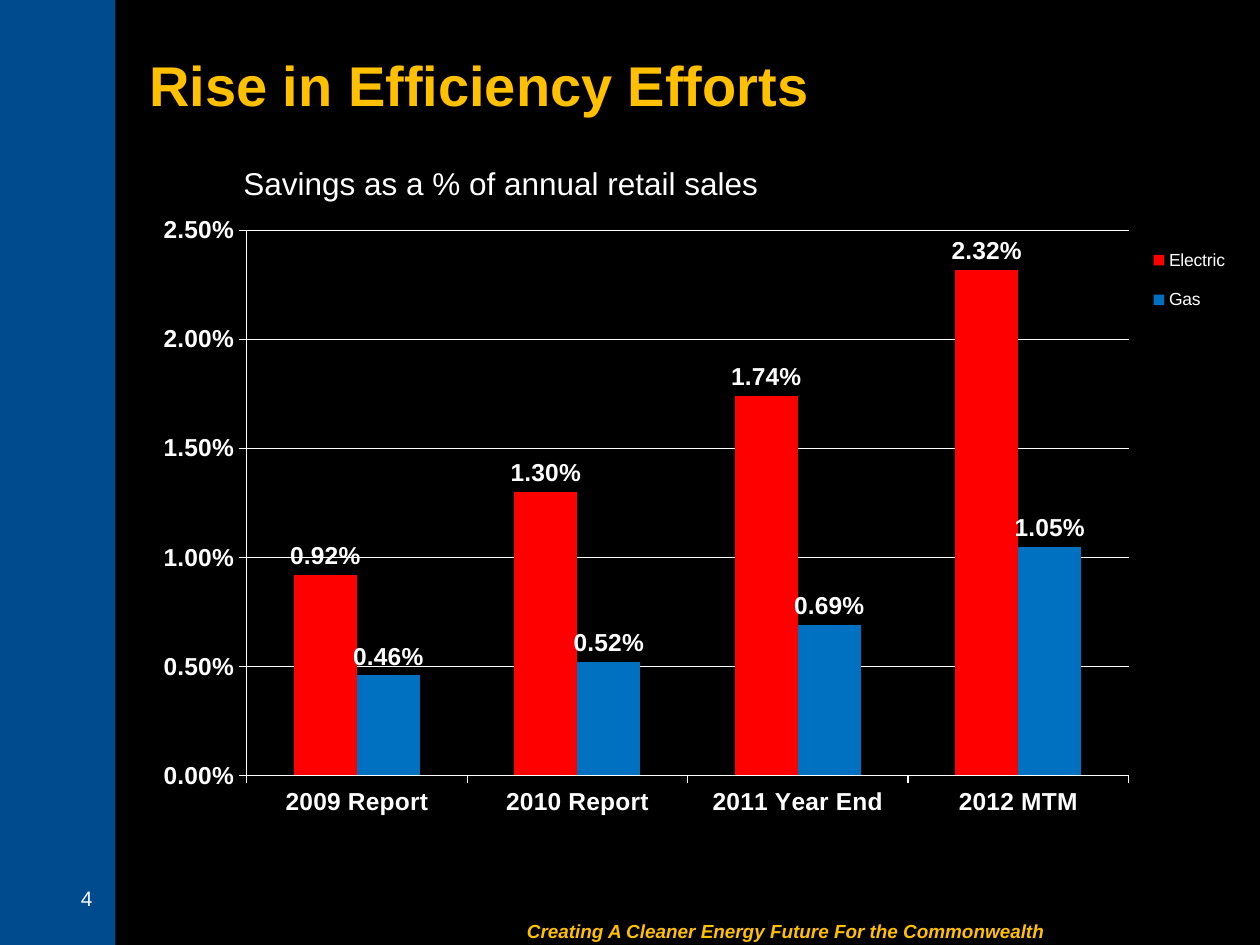
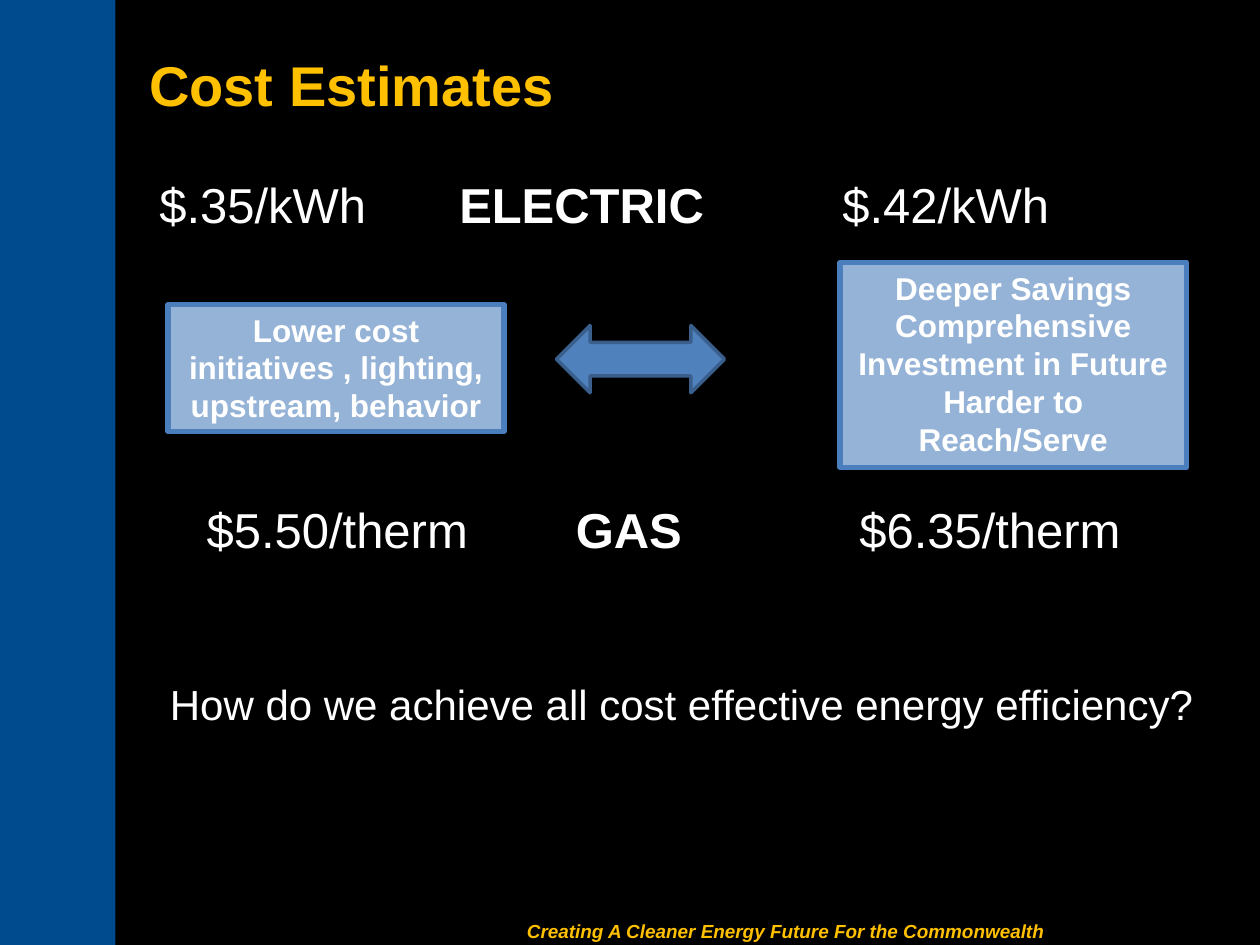
from lxml import etree
from pptx import Presentation
from pptx.chart.data import CategoryChartData
from pptx.dml.color import RGBColor
from pptx.enum.chart import XL_CHART_TYPE, XL_LABEL_POSITION, XL_LEGEND_POSITION, XL_TICK_MARK
from pptx.enum.shapes import MSO_SHAPE
from pptx.enum.text import MSO_ANCHOR, PP_ALIGN
from pptx.oxml.ns import qn
from pptx.util import Inches, Pt

COLUMN = XL_CHART_TYPE.COLUMN_CLUSTERED
OUTSIDE = XL_LABEL_POSITION.OUTSIDE_END
RIGHT_SIDE = XL_LEGEND_POSITION.RIGHT
TICK_OUT = XL_TICK_MARK.OUTSIDE
RECT, ARROW = MSO_SHAPE.RECTANGLE, MSO_SHAPE.LEFT_RIGHT_ARROW
TOP, MIDDLE = MSO_ANCHOR.TOP, MSO_ANCHOR.MIDDLE
LEFT, CENTER, RIGHT = PP_ALIGN.LEFT, PP_ALIGN.CENTER, PP_ALIGN.RIGHT

FONT = "Arial"
BLACK, WHITE, GOLD, NAVY = "000000", "FFFFFF", "FFC000", "004B8E"
COLS, ROWS = 120, 90
WIDTH, HEIGHT = Inches(10), Inches(7.5)
PERCENT = "0.00%"


def color(code):
    return RGBColor.from_string(code)


def grid(col, row, wide, high):
    """Turn grid columns and rows into left, top, width and height."""
    return (round(col * WIDTH / COLS), round(row * HEIGHT / ROWS),
            round(wide * WIDTH / COLS), round(high * HEIGHT / ROWS))


def style(font, size, code=WHITE, bold=False, italic=False):
    font.name, font.size = FONT, Pt(size)
    font.bold, font.italic = bold, italic
    font.color.rgb = color(code)


def add_run(para, text, size, **look):
    run = para.add_run()
    run.text = text
    style(run.font, size, **look)


def write(shape, lines, size, align=LEFT, anchor=TOP, **look):
    frame = shape.text_frame
    frame.word_wrap = True
    frame.vertical_anchor = anchor
    for i, line in enumerate(lines):
        para = frame.add_paragraph() if i else frame.paragraphs[0]
        para.alignment = align
        add_run(para, line, size, **look)


def add_text(slide, box, text, size, **look):
    write(slide.shapes.add_textbox(*grid(*box)), [text], size, **look)


def add_block(slide, kind, box, fill, edge=None, weight=0):
    block = slide.shapes.add_shape(kind, *grid(*box))
    block.shadow.inherit = False
    block.fill.solid()
    block.fill.fore_color.rgb = color(fill)
    if edge:
        block.line.color.rgb = color(edge)
        block.line.width = Pt(weight)
    else:
        block.line.fill.background()
    return block


def add_slide(prs, title):
    """Add a slide with the side band, title and footer."""
    slide = prs.slides.add_slide(prs.slide_layouts[5])
    add_block(slide, RECT, (0, 0, 11, ROWS), NAVY)
    add_text(slide, (49, 87, 57, 5), "Creating A Cleaner Energy Future For the Commonwealth",
             10.8, code=GOLD, bold=True, italic=True)
    head = slide.shapes.title
    head.left, head.top, head.width, head.height = grid(13, 3, 101, 10)
    write(head, [title], 32, anchor=MIDDLE, code=GOLD, bold=True)
    return slide


def set_layout(parent, after, inner, shares):
    """Fix a chart part at x, y, w and h shares of the chart."""
    for old in parent.findall(qn("c:layout")):
        parent.remove(old)
    layout = etree.Element(qn("c:layout"))
    manual = etree.SubElement(layout, qn("c:manualLayout"))
    pairs = [("layoutTarget", "inner")] if inner else []
    pairs += [("xMode", "edge"), ("yMode", "edge")] + list(zip("xywh", map(str, shares)))
    for name, value in pairs:
        etree.SubElement(manual, qn("c:" + name)).set("val", value)
    if after is None:
        parent.insert(0, layout)
    else:
        after.addnext(layout)


def style_axis(axis):
    axis.major_tick_mark = TICK_OUT
    style(axis.tick_labels.font, 14, bold=True)
    axis.format.line.color.rgb = color(WHITE)
    axis.format.line.width = Pt(0.75)


def add_chart(slide, box):
    data = CategoryChartData(number_format=PERCENT)
    data.categories = ["2009 Report", "2010 Report", "2011 Year End", "2012 MTM"]
    data.add_series("Electric", (0.0092, 0.013, 0.0174, 0.0232))
    data.add_series("Gas", (0.0046, 0.0052, 0.0069, 0.0105))
    chart = slide.shapes.add_chart(COLUMN, *grid(*box), data).chart
    chart.has_title = False
    style(chart.font, 10)

    scale = chart.value_axis
    for axis in (chart.category_axis, scale):
        style_axis(axis)
    scale.minimum_scale, scale.maximum_scale, scale.major_unit = 0, 0.025, 0.005
    scale.tick_labels.number_format = PERCENT
    scale.tick_labels.number_format_is_linked = False
    scale.has_major_gridlines = True
    lines = scale.major_gridlines.format.line
    lines.color.rgb = color(WHITE)
    lines.width = Pt(0.75)

    plot = chart.plots[0]
    plot.gap_width, plot.overlap, plot.vary_by_categories = 150, 0, False
    for series, code in zip(plot.series, ("FF0000", "0070C0")):
        series.format.fill.solid()
        series.format.fill.fore_color.rgb = color(code)
    plot.has_data_labels = True
    labels = plot.data_labels
    labels.show_value, labels.position = True, OUTSIDE
    labels.number_format, labels.number_format_is_linked = PERCENT, False
    style(labels.font, 14, bold=True)

    chart.has_legend = True
    legend = chart.legend
    legend.position, legend.include_in_layout = RIGHT_SIDE, False
    style(legend.font, 10)
    root = chart.element
    set_layout(root.find(".//" + qn("c:plotArea")), None, True, (0.1, 0.05, 0.8, 0.88))
    key = root.find(".//" + qn("c:legend"))
    set_layout(key, key.find(qn("c:legendPos")), False, (0.91, 0.05, 0.09, 0.16))


def add_rates(slide, box, stops, low, name, high):
    """Write a low rate, the fuel's name and a high rate at tab stops."""
    frame = slide.shapes.add_textbox(*grid(*box)).text_frame
    frame.word_wrap = True
    para = frame.paragraphs[0]
    tabs = etree.SubElement(para._p.get_or_add_pPr(), qn("a:tabLst"))
    for stop in stops:
        etree.SubElement(tabs, qn("a:tab"), pos=str(Inches(stop)), algn="l")
    add_run(para, low + "\t", 28)
    add_run(para, name, 28, bold=True)
    add_run(para, "\t" + high, 28)


def add_costs(slide, col, row):
    """Set out the rates, the two boxes and the arrow from a top left cell."""
    add_rates(slide, (col + 1, row, 100, 7), (2.38, 5.42), "$.35/kWh", "ELECTRIC", "$.42/kWh")
    add_rates(slide, (col + 5.5, row + 31, 94, 7), (2.93, 5.18),
              "$5.50/therm", "GAS", "$6.35/therm")
    for box, lines in (
        ((col + 67, row + 9, 33, 19.5),
         ["Deeper Savings", "Comprehensive", "Investment in Future", "Harder to Reach/Serve"]),
        ((col + 3, row + 13, 32, 12.1),
         ["Lower cost initiatives , lighting, upstream, behavior"]),
    ):
        block = add_block(slide, RECT, box, "95B3D7", "4B7EBC", 3)
        write(block, lines, 18, align=CENTER, bold=True)
    add_block(slide, ARROW, (col + 40, row + 15, 16, 6.4), "4F81BD", "3A5F8C", 2)
    add_text(slide, (col + 2, row + 48, 101, 6),
             "How do we achieve all cost effective energy efficiency?", 24)


def main():
    prs = Presentation()
    prs.slide_width, prs.slide_height = WIDTH, HEIGHT
    back = prs.slide_master.background.fill
    back.solid()
    back.fore_color.rgb = color(BLACK)

    rise = add_slide(prs, "Rise in Efficiency Efforts")
    add_text(rise, (2, 83, 8, 5), "4", 12, align=RIGHT, anchor=MIDDLE, code="F8F8F8")
    add_chart(rise, (13, 19, 105, 59))
    add_text(rise, (22, 15, 57, 5), "Savings as a % of annual retail sales", 18)

    add_costs(add_slide(prs, "Cost Estimates"), 13, 16)
    prs.save("out.pptx")


if __name__ == "__main__":
    main()
